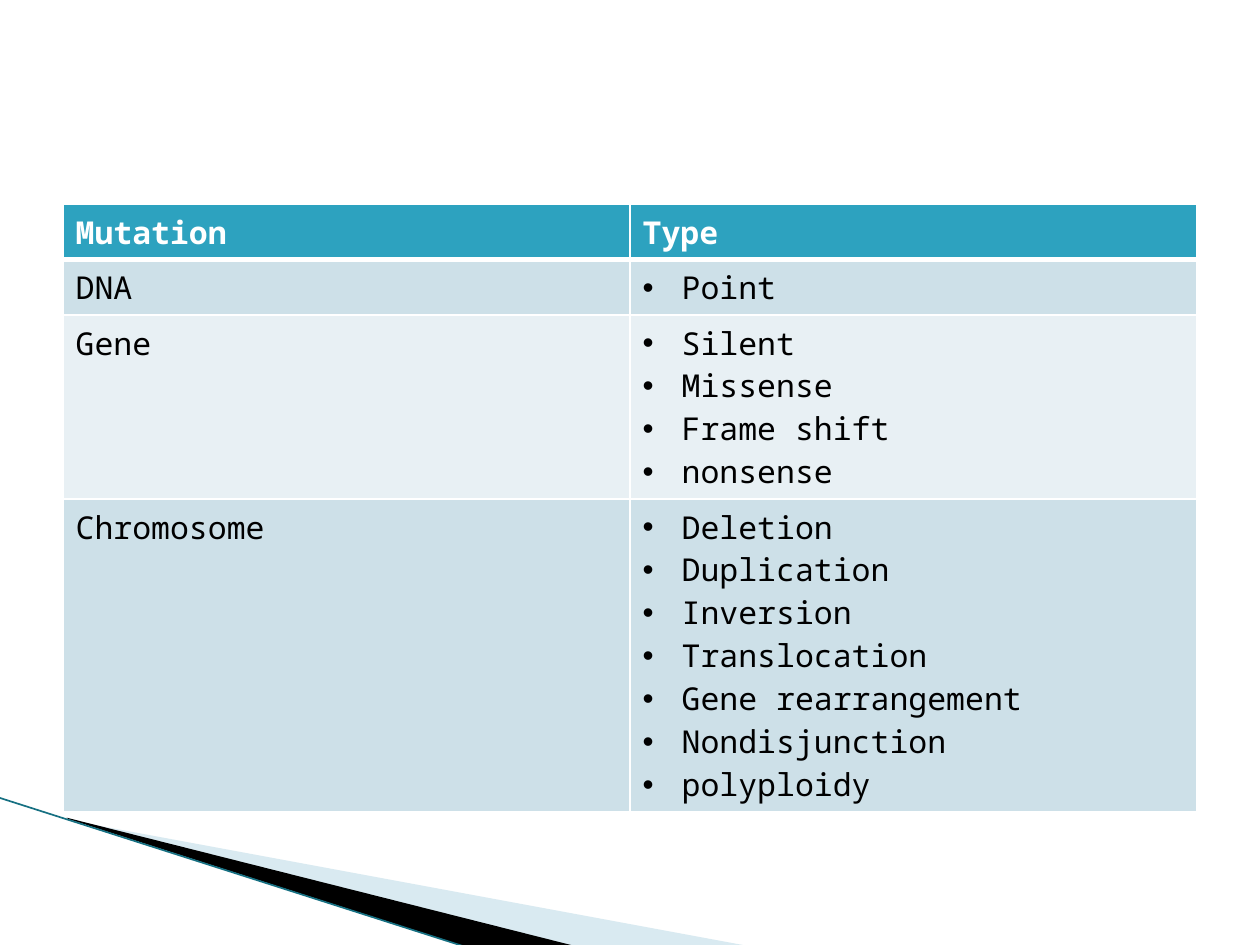
"""Build a slide with a table of mutation types."""
import pptx
import pptx.dml.color
import pptx.enum.shapes
import pptx.oxml.ns
import pptx.util
from lxml import etree

Inches = pptx.util.Inches
RGBColor = pptx.dml.color.RGBColor

FONT = "Noto Sans Mono"
WHITE = RGBColor(0xFF, 0xFF, 0xFF)
BLACK = RGBColor(0, 0, 0)
HEAD = RGBColor(0x2D, 0xA2, 0xBF)
BANDS = [RGBColor(0xCD, 0xE0, 0xE8), RGBColor(0xE8, 0xF0, 0xF4)]
PALE = RGBColor(0xA0, 0xCB, 0xDC)
TEAL = RGBColor(0x16, 0x70, 0x82)

ROWS = [
    ("DNA", ["Point"]),
    ("Gene", ["Silent", "Missense", "Frame shift", "nonsense"]),
    ("Chromosome", ["Deletion", "Duplication", "Inversion", "Translocation",
                    "Gene rearrangement", "Nondisjunction", "polyploidy"]),
]


def add_node(parent, tag, **attrs):
    node = etree.SubElement(parent, pptx.oxml.ns.qn(tag))
    for key, value in attrs.items():
        node.set(key, str(value))
    return node


def add_wedge(slide, points, color, alpha=None):
    spots = [(Inches(x), Inches(y)) for x, y in points]
    build = slide.shapes.build_freeform(*spots[0])
    build.add_line_segments(spots[1:], close=True)
    shape = build.convert_to_shape()
    shape.shadow.inherit = False
    shape.fill.solid()
    shape.fill.fore_color.rgb = color
    shape.line.fill.background()
    if alpha:
        tone = shape.fill._xPr.find(".//" + pptx.oxml.ns.qn("a:srgbClr"))
        add_node(tone, "a:alpha", val=alpha * 1000)


def add_line(slide, start, end, color, width):
    kind = pptx.enum.shapes.MSO_CONNECTOR.STRAIGHT
    line = slide.shapes.add_connector(kind, *map(Inches, start + end))
    line.line.color.rgb = color
    line.line.width = pptx.util.Pt(width)
    add_node(line._element.spPr, "a:effectLst")


def put_text(frame, lines, color=BLACK, bold=False, bullet=False):
    for i, line in enumerate(lines):
        para = frame.add_paragraph() if i else frame.paragraphs[0]
        if bullet:
            props = para._p.get_or_add_pPr()
            props.set("marL", str(Inches(0.31)))
            props.set("indent", str(-Inches(0.31)))
            add_node(props, "a:buFont", typeface="Arial")
            add_node(props, "a:buChar", char="•")
        run = para.add_run()
        run.text = line
        run.font.name = FONT
        run.font.size = pptx.util.Pt(18)
        run.font.bold = bold
        run.font.color.rgb = color


def style_cell(cell, color, base=1):
    props = cell._tc.get_or_add_tcPr()
    for side, width in zip("LRTB", (1, 1, 1, base)):
        edge = add_node(props, "a:ln" + side, w=pptx.util.Pt(width))
        add_node(add_node(edge, "a:solidFill"), "a:srgbClr", val=WHITE)
    cell.fill.solid()
    cell.fill.fore_color.rgb = color


def add_grid(slide):
    frame = slide.shapes.add_table(len(ROWS) + 1, 2, Inches(0.5), Inches(1.62),
                                   Inches(9), Inches(4.31))
    table = frame.table
    for row in table.rows:
        row.height = Inches(0.41)
    frame.height = Inches(4.31)
    for col, label in enumerate(("Mutation", "Type")):
        cell = table.cell(0, col)
        style_cell(cell, HEAD, base=3)
        put_text(cell.text_frame, [label], color=WHITE, bold=True)
    for i, (name, types) in enumerate(ROWS):
        for col, lines in enumerate(([name], types)):
            cell = table.cell(i + 1, col)
            style_cell(cell, BANDS[i % 2], base=1)
            put_text(cell.text_frame, lines, bullet=col == 1)


def main():
    deck = pptx.Presentation()
    deck.slide_width, deck.slide_height = Inches(10), Inches(7.5)
    slide = deck.slides.add_slide(deck.slide_layouts[6])
    add_wedge(slide, [(0.55, 6.51), (5.95, 7.51), (4.56, 7.51), (0.55, 6.5)],
              PALE, alpha=40)
    add_wedge(slide, [(0.53, 6.49), (4.57, 7.51), (3.72, 7.52), (0.54, 6.5)],
              BLACK)
    add_line(slide, (-0.01, 6.33), (3.71, 7.52), TEAL, 0.95)
    add_grid(slide)
    deck.save("out.pptx")


if __name__ == "__main__":
    main()
